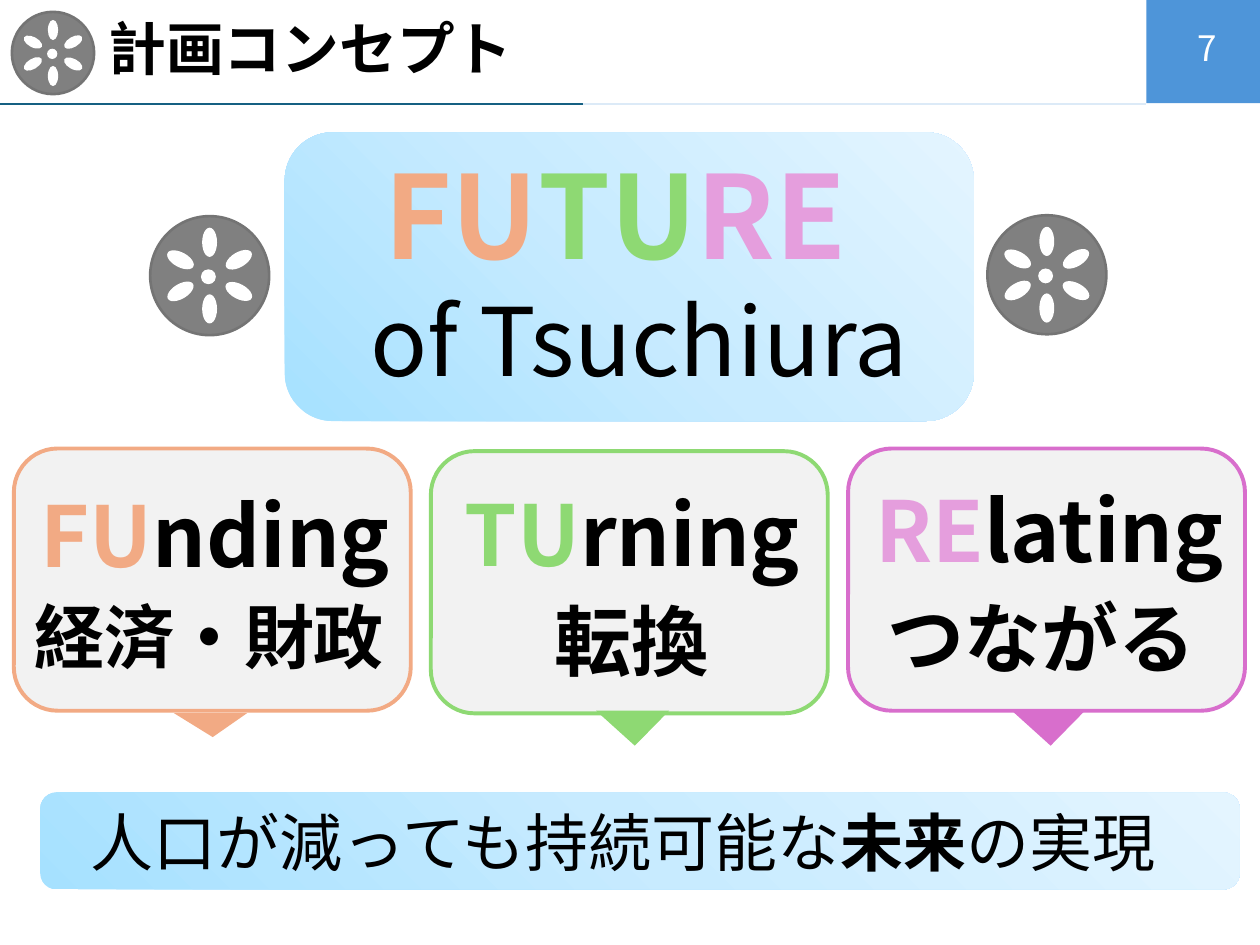
from copy import deepcopy

from lxml import etree
from pptx import Presentation
from pptx.dml.color import RGBColor
from pptx.enum import shapes, text
from pptx.oxml.ns import qn
from pptx.util import Pt

FONT = "Noto Sans CJK JP"
ORANGE, GREEN, PINK, PURPLE = "F2AA84", "8ED973", "E59EDD", "D86ECC"
BLACK, WHITE = "000000", "FFFFFF"
SKY = ["A6E1FF", "C8EBFF", "E4F5FF"]
rgb = RGBColor.from_string


def add_figure(parent, kind, left, top, width, height, fill, line=None, weight=2.25):
    """Add a preset shape; a list of three colours gives a diagonal gradient."""
    figure = parent.add_shape(kind, Pt(left), Pt(top), Pt(width), Pt(height))
    figure.shadow.inherit = False
    if isinstance(fill, list):
        figure.fill.gradient()
        figure.fill.gradient_angle = 45
        stops = figure._element.spPr.find(qn("a:gradFill")).find(qn("a:gsLst"))
        stops.insert(1, deepcopy(stops[0]))
        for stop, position, colour in zip(figure.fill.gradient_stops, (0, 0.5, 1), fill):
            stop.position = position
            stop.color.rgb = rgb(colour)
    else:
        figure.fill.solid()
        figure.fill.fore_color.rgb = rgb(fill)
    if line:
        figure.line.color.rgb = rgb(line)
        figure.line.width = Pt(weight)
    else:
        figure.line.fill.background()
    return figure


def write(box, lines, align=text.PP_ALIGN.CENTER, wrap=True):
    """Fill a box with lines of (size, [(words, colour, bold), ...])."""
    frame = box.text_frame
    frame.word_wrap = wrap
    frame.text = "\n".join("" for _ in lines)
    for paragraph, (size, pieces) in zip(frame.paragraphs, lines):
        paragraph.alignment = align
        for words, colour, bold in pieces:
            run = paragraph.add_run()
            run.text = words
            run.font.size = Pt(size)
            run.font.bold = bold
            run.font.name = FONT
            run.font.color.rgb = rgb(colour)
            east_asian = etree.SubElement(run._r.get_or_add_rPr(), qn("a:ea"))
            east_asian.set("typeface", FONT)
    return frame


deck = Presentation()
deck.slide_width, deck.slide_height = Pt(720), Pt(540)
slide = deck.slides.add_slide(deck.slide_layouts[5])
items = slide.shapes
preset = shapes.MSO_SHAPE

# Header rules and page number
for start, end, colour in ((0, 335, "156082"), (333, 655, "DCEAF7")):
    rule = items.add_connector(
        shapes.MSO_CONNECTOR.STRAIGHT, Pt(start), Pt(59.5), Pt(end), Pt(59.5))
    rule.line.color.rgb = rgb(colour)
    rule.line.width = Pt(1)
    etree.SubElement(rule._element.spPr, qn("a:effectLst"))
add_figure(items, preset.RECTANGLE, 655, 0, 65, 59, "4E95D9")
page = items.add_textbox(Pt(662.4), Pt(13), Pt(40.3), Pt(28.8))
page_frame = write(page, [(20, [("7", WHITE, False)])], text.PP_ALIGN.RIGHT)
page_frame.vertical_anchor = text.MSO_ANCHOR.MIDDLE

# Title
title = items.title
title.left, title.top, title.width, title.height = Pt(54.7), Pt(0.7), Pt(620.6), Pt(57.6)
title_frame = write(title, [(33, [("計画コンセプト", BLACK, True)])], text.PP_ALIGN.LEFT)
title_frame.auto_size = text.MSO_AUTO_SIZE.NONE
title_frame.vertical_anchor = text.MSO_ANCHOR.MIDDLE
title_frame.paragraphs[0].line_spacing = 0.9

# Lotus root emblems: six petals around a hub, in parts of the diameter
petals = [(0, -0.28, 0), (0, 0.28, 0), (0.245, 0.133, 118.1), (-0.245, -0.133, 118.1),
          (0.245, -0.133, 59.2), (-0.245, 0.133, 59.2)]
for left, top, size in ((6.8, 6.8, 47), (564.2, 123, 68), (85.8, 123.5, 68)):
    emblem = items.add_group_shape().shapes
    add_figure(emblem, preset.OVAL, left, top, size, size, "808080", "747474", 1.5)
    centre_x, centre_y = left + size / 2, top + size / 2
    short, long = 0.125 * size, 0.245 * size
    for dx, dy, angle in petals:
        petal = add_figure(emblem, preset.OVAL, centre_x + dx * size - short / 2,
                           centre_y + dy * size - long / 2, short, long, WHITE)
        petal.rotation = angle
    add_figure(emblem, preset.OVAL, centre_x - 0.01 * size - short / 2,
               centre_y + 0.01 * size - short / 2, short, short, WHITE)

# Main concept
add_figure(items, preset.ROUNDED_RECTANGLE, 162.7, 75.6, 393.8, 165, SKY)
concept = items.add_textbox(Pt(102.2), Pt(78.5), Pt(514), Pt(152.6))
write(concept, [
    (66, [("FU", ORANGE, True), ("TU", GREEN, True), ("RE ", PINK, True)]),
    (54, [(" of Tsuchiura", BLACK, False)]),
])

# Three pillars: card, English word, Japanese word, pointer
pillars = [
    # left, top, colour, initials, colour, rest, x, y, Japanese, size, x, y, pointer x, y, height
    (7.9, 256.3, ORANGE, "FU", ORANGE, "nding", -82.8, 272.9,
     "経済・財政", 40, -86.4, 335.5, 99.4, 407.5, 13.7),
    (246.2, 257.8, GREEN, "TU", GREEN, "rning", 155.5, 272.2,
     "転換", 44, 154.8, 335.5, 340.6, 406.1, 20),
    (484.6, 256.3, PURPLE, "RE", PINK, "lating", 393.8, 270,
     "つながる", 44, 389.5, 334.1, 578.2, 406.1, 20),
]
for (left, top, colour, initials, accent, rest, word_x, word_y,
     japanese, size, japanese_x, japanese_y, tip_x, tip_y, tip_height) in pillars:
    add_figure(items, preset.ROUNDED_RECTANGLE, left, top, 226.8, 149.8, "F2F2F2", colour)
    word = items.add_textbox(Pt(word_x), Pt(word_y), Pt(411.8), Pt(65.5))
    write(word, [(48, [(initials, accent, True), (rest, BLACK, True)])])
    meaning = items.add_textbox(Pt(japanese_x), Pt(japanese_y), Pt(411.8), Pt(60))
    write(meaning, [(size, [(japanese, BLACK, True)])])
    pointer = add_figure(items, preset.ISOSCELES_TRIANGLE, tip_x, tip_y, 41.8, tip_height, colour)
    pointer.adjustments[0] = 0.47
    pointer.rotation = 180

# Goal
add_figure(items, preset.ROUNDED_RECTANGLE, 23, 452.9, 685.4, 55.4, SKY)
goal = items.add_textbox(Pt(44.6), Pt(455.8), Pt(632.2), Pt(51))
write(goal, [(36, [("人口が減っても持続可能な", BLACK, False), ("未来", BLACK, True),
                   ("の実現", BLACK, False)])], text.PP_ALIGN.LEFT, wrap=False)

deck.save("out.pptx")
